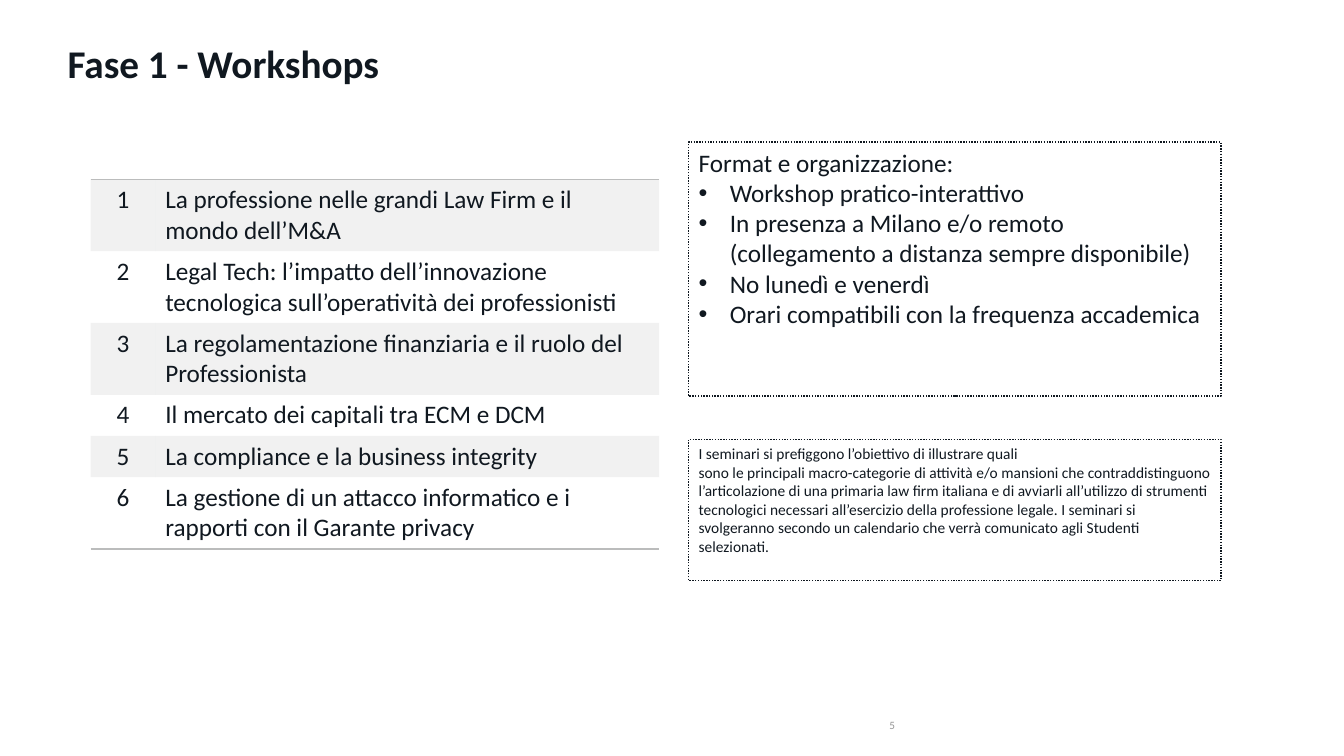
from dataclasses import dataclass

from lxml import etree
from pptx import Presentation
from pptx.dml.color import RGBColor
from pptx.enum.dml import MSO_LINE
from pptx.enum.shapes import MSO_SHAPE
from pptx.enum.text import MSO_ANCHOR, PP_ALIGN
from pptx.oxml.ns import qn
from pptx.util import Emu, Inches, Pt

LEFT, CENTER = PP_ALIGN.LEFT, PP_ALIGN.CENTER
TOP = MSO_ANCHOR.TOP
DOTTED = MSO_LINE.ROUND_DOT
RECTANGLE = MSO_SHAPE.RECTANGLE
PLAIN_TABLE_STYLE = "{2D5ABB26-0587-4C30-8999-92F81FD0307C}"


@dataclass(frozen=True)
class Theme:
    font: str = "Calibri"
    ink: str = "101820"
    muted: str = "969696"
    band: str = "BBBCBC"
    band_alpha: int = 20
    title: int = 28
    title_line: int = 32
    body: int = 18
    note: int = 11
    number: int = 8
    rule: int = 1
    indent: float = 0.31


THEME = Theme()

# The slide is a grid of 100 columns by 100 rows
WIDTH, HEIGHT = Inches(13.33), Inches(7.5)

WORKSHOPS = [
    "La professione nelle grandi Law Firm e il mondo dell’M&A",
    "Legal Tech: l’impatto dell’innovazione tecnologica sull’operatività dei professionisti",
    "La regolamentazione finanziaria e il ruolo del Professionista",
    "Il mercato dei capitali tra ECM e DCM",
    "La compliance e la business integrity",
    "La gestione di un attacco informatico e i rapporti con il Garante privacy",
]
ONE_LINE, TWO_LINES = 5.45, 9.5
ROW_HEIGHTS = [TWO_LINES] * 3 + [ONE_LINE] * 2 + [TWO_LINES]
NUMBER_COLUMN = 4.8

FORMAT_HEADING = "Format e organizzazione:"
FORMAT_POINTS = [
    "Workshop pratico-interattivo",
    "In presenza a Milano e/o remoto (collegamento a distanza sempre disponibile)",
    "No lunedì e venerdì",
    "Orari compatibili con la frequenza accademica",
]
AIMS = [
    "I seminari si prefiggono l’obiettivo di illustrare quali",
    "sono le principali macro-categorie di attività e/o mansioni che contraddistinguono "
    "l’articolazione di una primaria law firm italiana e di avviarli all’utilizzo di strumenti "
    "tecnologici necessari all’esercizio della professione legale. I seminari si svolgeranno "
    "secondo un calendario che verrà comunicato agli Studenti selezionati.",
]


def columns(count):
    return Emu(round(WIDTH * count / 100))


def rows(count):
    return Emu(round(HEIGHT * count / 100))


def place(box):
    left, top, width, height = box
    return columns(left), rows(top), columns(width), rows(height)


def write(para, text, size, color=THEME.ink, align=LEFT, bold=False):
    para.text = text
    para.alignment = align
    para.font.name = THEME.font
    para.font.size = Pt(size)
    para.font.bold = bold
    para.font.color.rgb = RGBColor.from_string(color)


def add_bullet(para):
    properties = para._p.get_or_add_pPr()
    properties.set("marL", str(Inches(THEME.indent)))
    properties.set("indent", str(-Inches(THEME.indent)))
    etree.SubElement(properties, qn("a:buFont"), typeface="Arial")
    etree.SubElement(properties, qn("a:buChar"), char="•")


def add_label(page, box, text, size, color, bold=False):
    """Single line of text without margins."""
    frame = page.shapes.add_textbox(*place(box)).text_frame
    frame.word_wrap = True
    frame.margin_left = frame.margin_right = frame.margin_top = frame.margin_bottom = 0
    para = frame.paragraphs[0]
    write(para, text, size, color, bold=bold)
    return para


def shade(cell):
    cell.fill.solid()
    cell.fill.fore_color.rgb = RGBColor.from_string(THEME.band)
    color = cell._tc.tcPr.find(".//" + qn("a:srgbClr"))
    etree.SubElement(color, qn("a:alpha"), val=str(THEME.band_alpha * 1000))


def add_border(cell, tag):
    line = etree.Element(qn(tag), w=str(Pt(THEME.rule)))
    fill = etree.SubElement(line, qn("a:solidFill"))
    etree.SubElement(fill, qn("a:srgbClr"), val=THEME.band)
    cell._tc.get_or_add_tcPr().insert(0, line)


def add_workshops(page, box):
    """Numbered table, banded, with a rule above and below."""
    table = page.shapes.add_table(len(WORKSHOPS), 2, *place(box)).table
    table.first_row = table.horz_banding = False
    table._tbl.tblPr.find(qn("a:tableStyleId")).text = PLAIN_TABLE_STYLE
    for column, width in zip(table.columns, (NUMBER_COLUMN, box[2] - NUMBER_COLUMN)):
        column.width = columns(width)

    last = len(WORKSHOPS) - 1
    for index, (topic, height) in enumerate(zip(WORKSHOPS, ROW_HEIGHTS)):
        table.rows[index].height = rows(height)
        entries = ((str(index + 1), CENTER), (topic, LEFT))
        for cell, (text, align) in zip(table.rows[index].cells, entries):
            write(cell.text_frame.paragraphs[0], text, THEME.body, align=align)
            if index % 2 == 0 and index != last:
                shade(cell)
            else:
                cell.fill.background()
            if index == 0:
                add_border(cell, "a:lnT")
            if index == last:
                add_border(cell, "a:lnB")


def add_panel(page, box, plain, points, size):
    """Dotted frame with plain paragraphs followed by bullets."""
    panel = page.shapes.add_shape(RECTANGLE, *place(box))
    panel.shadow.inherit = False
    panel.fill.background()
    panel.line.color.rgb = RGBColor.from_string(THEME.ink)
    panel.line.width = Pt(THEME.rule)
    panel.line.dash_style = DOTTED
    frame = panel.text_frame
    frame.word_wrap = True
    frame.vertical_anchor = TOP
    for index, text in enumerate(plain + points):
        para = frame.add_paragraph() if index else frame.paragraphs[0]
        if index >= len(plain):
            add_bullet(para)
        write(para, text, size)


def build_workshop_page(deck):
    page = deck.slides.add_slide(deck.slide_layouts[6])
    # Title and page number
    title = add_label(page, (5.03, 5.47, 90, 10.8), "Fase 1 - Workshops",
                      THEME.title, THEME.ink, bold=True)
    title.line_spacing = Pt(THEME.title_line)
    add_label(page, (66.17, 95.07, 13.8, 4.53), "5", THEME.number, THEME.muted)
    # Topics on the left, panels on the right
    add_workshops(page, (6.75, 23.73, 42.3, sum(ROW_HEIGHTS)))
    panel_left, panel_width = 51.24, 39.61
    add_panel(page, (panel_left, 18.8, panel_width, 33.6),
              [FORMAT_HEADING], FORMAT_POINTS, THEME.body)
    add_panel(page, (panel_left, 58.13, panel_width, 18.67), AIMS, [], THEME.note)


def main():
    deck = Presentation()
    deck.slide_width, deck.slide_height = WIDTH, HEIGHT
    build_workshop_page(deck)
    deck.save("out.pptx")


if __name__ == "__main__":
    main()
